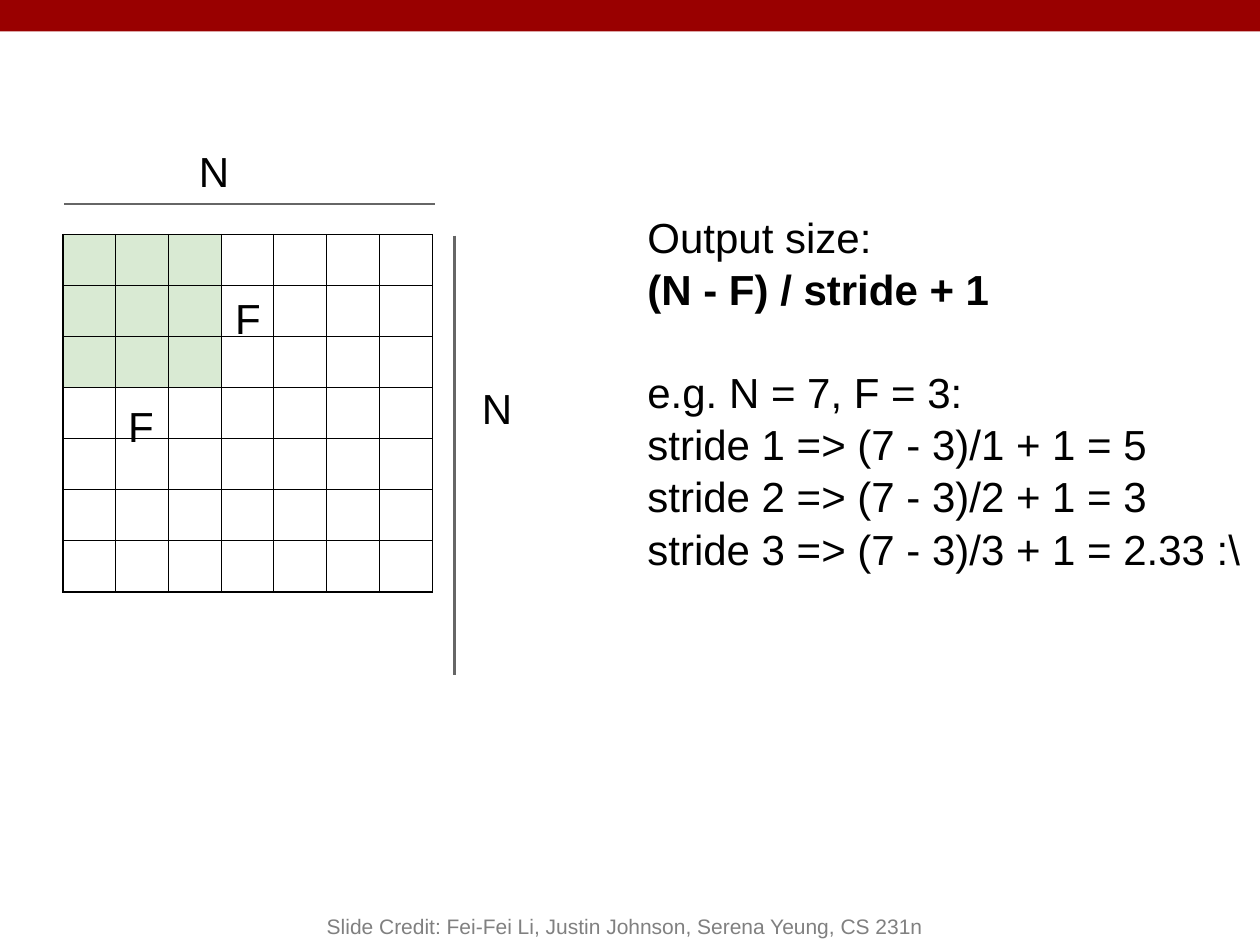
from lxml import etree
from pptx import Presentation
from pptx.dml.color import RGBColor
from pptx.enum.shapes import MSO_CONNECTOR, MSO_SHAPE
from pptx.enum.text import MSO_ANCHOR, PP_ALIGN
from pptx.oxml.ns import qn
from pptx.util import Inches, Pt

RECTANGLE = MSO_SHAPE.RECTANGLE
STRAIGHT = MSO_CONNECTOR.STRAIGHT
TOP, BOTTOM = MSO_ANCHOR.TOP, MSO_ANCHOR.BOTTOM
LEFT, CENTER = PP_ALIGN.LEFT, PP_ALIGN.CENTER

COLORS = {"banner": "990000", "filter": "D9EAD3", "input": "FFFFFF",
          "rule": "666666", "ink": "000000", "credit": "808080"}
FONT = "Arial"
WIDTH, HEIGHT = Inches(10), Inches(7.5)
N, F = 7, 3
LINE_SPACING = 1.04
BLANK_LINE = Pt(28.7)


def color(name):
    return RGBColor.from_string(COLORS[name])


def share(left, top, width, height):
    """Box in EMU from shares of the slide's size."""
    return (round(left * WIDTH), round(top * HEIGHT),
            round(width * WIDTH), round(height * HEIGHT))


def add_text(slide, box, lines, size=24, ink="ink", align=LEFT,
             anchor=TOP, inset=0.1, spacing=LINE_SPACING):
    """Each line is (text, bold, space before)."""
    frame = slide.shapes.add_textbox(*box).text_frame
    frame.word_wrap = True
    frame.vertical_anchor = anchor
    frame.margin_top = frame.margin_bottom = Inches(inset)
    for index, (text, bold, gap) in enumerate(lines):
        paragraph = frame.paragraphs[0] if index == 0 else frame.add_paragraph()
        paragraph.alignment = align
        paragraph.line_spacing = spacing
        paragraph.space_before = gap
        run = paragraph.add_run()
        run.text = text
        run.font.name, run.font.size, run.font.bold = FONT, Pt(size), bold
        run.font.color.rgb = color(ink)


def add_rule(slide, start, end):
    rule = slide.shapes.add_connector(STRAIGHT, *start, *end)
    rule.line.color.rgb = color("rule")
    rule.line.width = Pt(1.5)
    etree.SubElement(rule.element.spPr, qn("a:effectLst"))


def border_cell(cell):
    properties = cell._tc.get_or_add_tcPr()
    for position, side in enumerate(("lnL", "lnR", "lnT", "lnB")):
        edge = etree.Element(qn(f"a:{side}"), w=str(Pt(0.75)))
        fill = etree.SubElement(edge, qn("a:solidFill"))
        etree.SubElement(fill, qn("a:srgbClr"), val=COLORS["ink"])
        properties.insert(position, edge)


def add_banner(slide, box):
    banner = slide.shapes.add_shape(RECTANGLE, *box)
    banner.shadow.inherit = False
    banner.fill.solid()
    banner.fill.fore_color.rgb = color("banner")
    banner.line.fill.background()


def add_input_grid(slide, box):
    left, top, width, height = box
    holder = slide.shapes.add_table(N, N, *box)
    table = holder.table
    table.first_row = table.horz_banding = False
    for column in table.columns:
        column.width = width // N
    for row in table.rows:
        row.height = 0  # rows grow to the height of one text line
    holder.height = height

    # Filter window in the top left corner
    for row in range(N):
        for column in range(N):
            cell = table.cell(row, column)
            if row < F:
                cell.fill.solid()
                cell.fill.fore_color.rgb = color("filter" if column < F else "input")
            else:
                cell.fill.background()
            border_cell(cell)

    def at(column, row):
        return round(left + column * width / N), round(top + row * height / N)

    # Extent rules above and beside the grid
    add_rule(slide, at(0.02, -0.48), at(7.06, -0.48))
    add_rule(slide, at(7.42, 0.02), at(7.42, 7))

    # Side labels, placed in columns and rows
    label_size = round(2.03 * width / N), round(0.86 * height / N)
    for letter, column, row in (("N", 2.34, -1.64), ("N", 7.71, 2.12),
                                ("F", 1, 2.4), ("F", 3.03, 0.7)):
        add_text(slide, (*at(column, row), *label_size), [(letter, False, 0)])


def add_output_sizes(slide, box):
    lines = [("Output size:", False, 0),
             ("(N - F) / stride + 1", True, 0),
             (f"e.g. N = {N}, F = {F}:", False, BLANK_LINE)]
    for stride, result in enumerate(("5", "3", "2.33 :\\"), start=1):
        lines.append((f"stride {stride} => ({N} - {F})/{stride} + 1 = {result}", False, 0))
    add_text(slide, box, lines)


def add_credit(slide, box):
    credit = "Slide Credit: Fei-Fei Li, Justin Johnson, Serena Yeung, CS 231n"
    add_text(slide, box, [(credit, False, 0)], size=12, ink="credit",
             align=CENTER, anchor=BOTTOM, inset=0.05, spacing=1)


def main():
    deck = Presentation()
    deck.slide_width, deck.slide_height = WIDTH, HEIGHT
    slide = deck.slides.add_slide(deck.slide_layouts[6])
    add_banner(slide, share(0, 0, 1, 1 / 30))
    add_input_grid(slide, share(0.05, 0.248, 0.293, 7 / 15))
    add_output_sizes(slide, share(0.504, 0.208, 0.496, 0.352))
    add_credit(slide, share(0.2, 14 / 15, 0.592, 1 / 15))
    deck.save("out.pptx")


if __name__ == "__main__":
    main()
